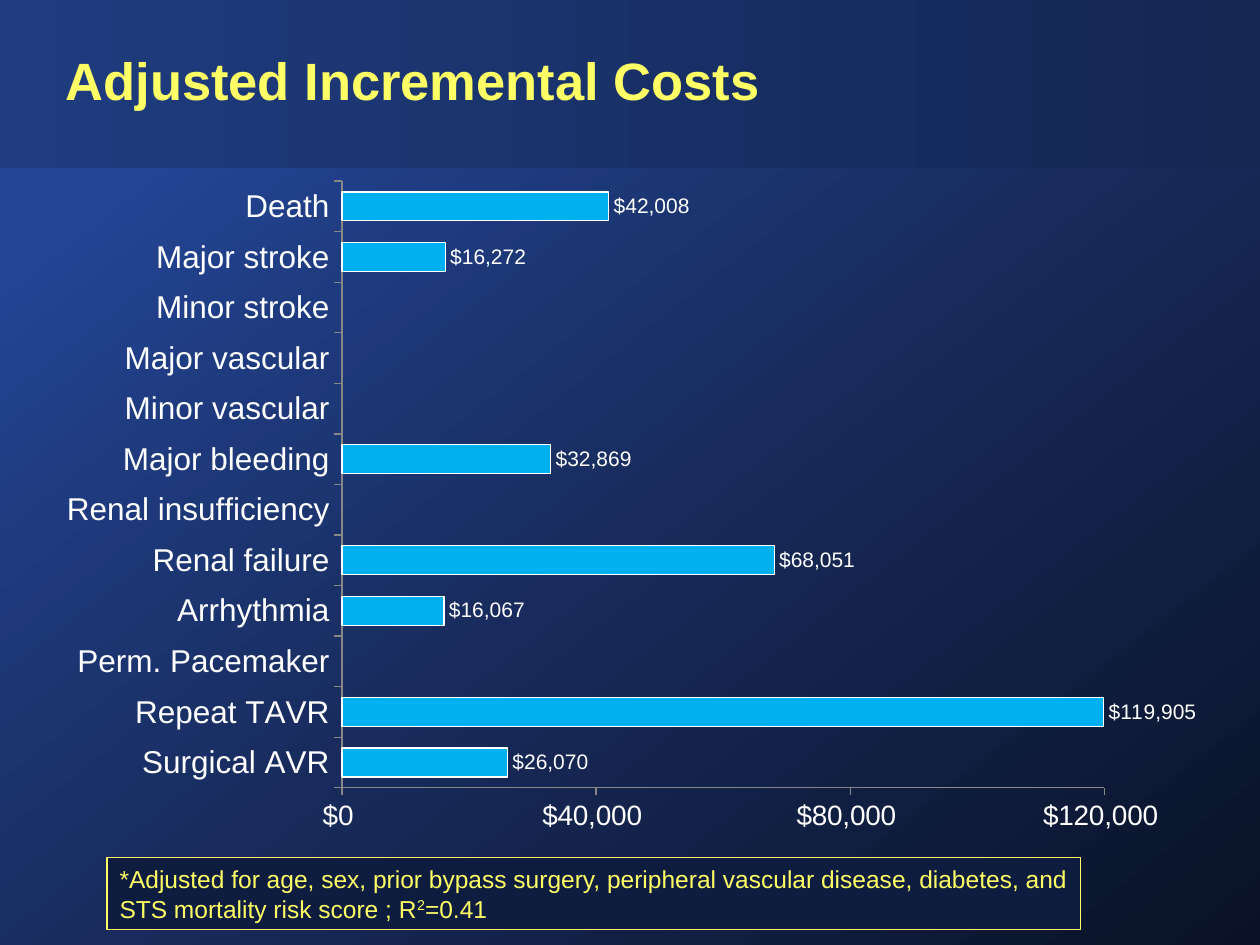
from dataclasses import dataclass

from lxml import etree
from pptx import Presentation
from pptx.chart.data import CategoryChartData
from pptx.dml.color import RGBColor
from pptx.enum.chart import XL_CHART_TYPE, XL_LABEL_POSITION, XL_TICK_MARK
from pptx.enum.shapes import MSO_SHAPE
from pptx.enum.text import MSO_ANCHOR, MSO_AUTO_SIZE, PP_ALIGN
from pptx.oxml.ns import qn
from pptx.util import Cm, Pt

BAR = XL_CHART_TYPE.BAR_CLUSTERED
LABEL_OUTSIDE = XL_LABEL_POSITION.OUTSIDE_END
TICK_OUT = XL_TICK_MARK.OUTSIDE
RECTANGLE = MSO_SHAPE.RECTANGLE
MIDDLE = MSO_ANCHOR.MIDDLE
LEFT = PP_ALIGN.LEFT
NO_AUTOFIT = MSO_AUTO_SIZE.NONE
GROW = MSO_AUTO_SIZE.SHAPE_TO_FIT_TEXT

SLIDE_WIDTH, SLIDE_HEIGHT, BAND_HEIGHT = 25.4, 19.05, 3.38
DOLLARS = '"$"#,##0_);[Red]\\("$"#,##0\\)'

# Top to bottom, as the bars are read
COSTS = [
    ("Death", 42008),
    ("Major stroke", 16272),
    ("Minor stroke", None),
    ("Major vascular", None),
    ("Minor vascular", None),
    ("Major bleeding", 32869),
    ("Renal insufficiency", None),
    ("Renal failure", 68051),
    ("Arrhythmia", 16067),
    ("Perm. Pacemaker", None),
    ("Repeat TAVR", 119905),
    ("Surgical AVR", 26070),
]


@dataclass(frozen=True)
class Theme:
    font: str = "Arial"
    accent: str = "FFFF66"
    text: str = "FFFFFF"
    bar: str = "00B0F0"
    axis: str = "878787"
    note_fill: str = "0E1D3F"
    background: tuple = ((0, "234594"), (14, "234594"), (53, "182B5C"), (100, "091226"))
    band: tuple = ((0, "1E3C7F"), (100, "142652"))
    title_size: int = 30
    category_size: int = 18
    value_size: int = 16
    note_size: int = 14
    label_size: int = 12
    line_width: float = 0.75


class SlideBuilder:
    def __init__(self, slide, theme):
        self.slide = slide
        self.theme = theme

    def style(self, font, size, color, bold=False):
        font.name = self.theme.font
        font.size = Pt(size)
        font.bold = bold
        font.color.rgb = RGBColor.from_string(color)

    def outline(self, line, color):
        line.color.rgb = RGBColor.from_string(color)
        line.width = Pt(self.theme.line_width)

    def gradient(self, fill, owner, stops, angle):
        fill.gradient()
        fill.gradient_angle = -angle % 360  # counted counter-clockwise
        stop_list = next(owner.iter(qn("a:gsLst")))
        for old_stop in list(stop_list):
            stop_list.remove(old_stop)
        for percent, color in stops:
            stop = etree.SubElement(stop_list, qn("a:gs"), pos=str(percent * 1000))
            etree.SubElement(stop, qn("a:srgbClr"), val=color)

    def background(self):
        self.gradient(self.slide.background.fill, self.slide.element,
                      self.theme.background, 52)

    def rectangle(self, *box):
        shape = self.slide.shapes.add_shape(RECTANGLE, *map(Cm, box))
        shape.shadow.inherit = False
        return shape

    def band(self, *box):
        band = self.rectangle(*box)
        self.gradient(band.fill, band.element, self.theme.band, 0)
        band.line.fill.background()
        self.slide.shapes.element.insert(2, band.element)  # behind the title

    def title(self, text, *box):
        title = self.slide.shapes.title
        title.left, title.top, title.width, title.height = map(Cm, box)
        frame = title.text_frame
        frame.auto_size = NO_AUTOFIT
        frame.vertical_anchor = MIDDLE
        paragraph = frame.paragraphs[0]
        paragraph.alignment = LEFT
        paragraph.line_spacing = 0.9
        run = paragraph.add_run()
        run.text = text
        self.style(run.font, self.theme.title_size, self.theme.accent, bold=True)

    def note(self, parts, *box):
        note = self.rectangle(*box)
        note.fill.solid()
        note.fill.fore_color.rgb = RGBColor.from_string(self.theme.note_fill)
        self.outline(note.line, self.theme.accent)
        frame = note.text_frame
        frame.word_wrap = True
        frame.auto_size = GROW
        frame.vertical_anchor = MIDDLE
        paragraph = frame.paragraphs[0]
        paragraph.alignment = LEFT
        for text, baseline in parts:
            run = paragraph.add_run()
            run.text = text
            self.style(run.font, self.theme.note_size, self.theme.accent)
            if baseline:
                run.font._element.set("baseline", str(baseline * 1000))

    def cost_chart(self, costs, *box):
        theme = self.theme
        data = CategoryChartData()
        data.categories = [event for event, _ in reversed(costs)]
        data.add_series("Series 1", [cost for _, cost in reversed(costs)])
        chart = self.slide.shapes.add_chart(BAR, *map(Cm, box), data).chart
        chart.has_legend = False
        chart.has_title = False
        self.style(chart.font, theme.category_size, theme.text)

        # Bars and their labels
        plot = chart.plots[0]
        plot.gap_width = 75
        plot.vary_by_categories = False
        bars = plot.series[0]
        bars.format.fill.solid()
        bars.format.fill.fore_color.rgb = RGBColor.from_string(theme.bar)
        self.outline(bars.format.line, theme.text)
        labels = bars.data_labels
        labels.show_value = True
        labels.position = LABEL_OUTSIDE
        labels.number_format = DOLLARS
        labels.number_format_is_linked = False
        self.style(labels.font, theme.label_size, theme.text)

        # Axes
        values = chart.value_axis
        values.minimum_scale, values.maximum_scale = 0, 120000
        values.major_unit = 40000
        values.tick_labels.number_format = DOLLARS
        values.tick_labels.number_format_is_linked = False
        for axis, size in ((chart.category_axis, theme.category_size),
                           (values, theme.value_size)):
            axis.has_major_gridlines = False
            axis.major_tick_mark = TICK_OUT
            self.outline(axis.format.line, theme.axis)
            self.style(axis.tick_labels.font, size, theme.text)
        self.place_plot(chart, x=0.25, y=0.02, w=0.66, h=0.9)

    def place_plot(self, chart, **fractions):
        plot_area = next(chart.element.iter(qn("c:plotArea")))
        for old_layout in plot_area.findall(qn("c:layout")):
            plot_area.remove(old_layout)
        layout = etree.Element(qn("c:layout"))
        plot_area.insert(0, layout)
        manual = etree.SubElement(layout, qn("c:manualLayout"))
        settings = {"layoutTarget": "inner", "xMode": "edge", "yMode": "edge", **fractions}
        for tag, value in settings.items():
            etree.SubElement(manual, qn(f"c:{tag}"), val=str(value))


def main():
    deck = Presentation()
    deck.slide_width, deck.slide_height = Cm(SLIDE_WIDTH), Cm(SLIDE_HEIGHT)
    title_only = deck.slide_layouts[5]
    builder = SlideBuilder(deck.slides.add_slide(title_only), Theme())

    # Backdrop and heading
    builder.background()
    builder.band(0, 0, SLIDE_WIDTH, BAND_HEIGHT)
    builder.title("Adjusted Incremental Costs", 1.07, 0, 18.42, BAND_HEIGHT)

    # Cost per complication
    builder.cost_chart(COSTS, 1.07, BAND_HEIGHT, 23.29, 13.59)

    # Footnote
    builder.note([
        ("*Adjusted for age, sex, prior bypass surgery, peripheral vascular disease, "
         "diabetes, and STS mortality risk score ; R", 0),
        ("2", 30),
        ("=0.41", 0),
    ], 2.16, 17.29, 19.63, 1.45)

    deck.save("out.pptx")


if __name__ == "__main__":
    main()
